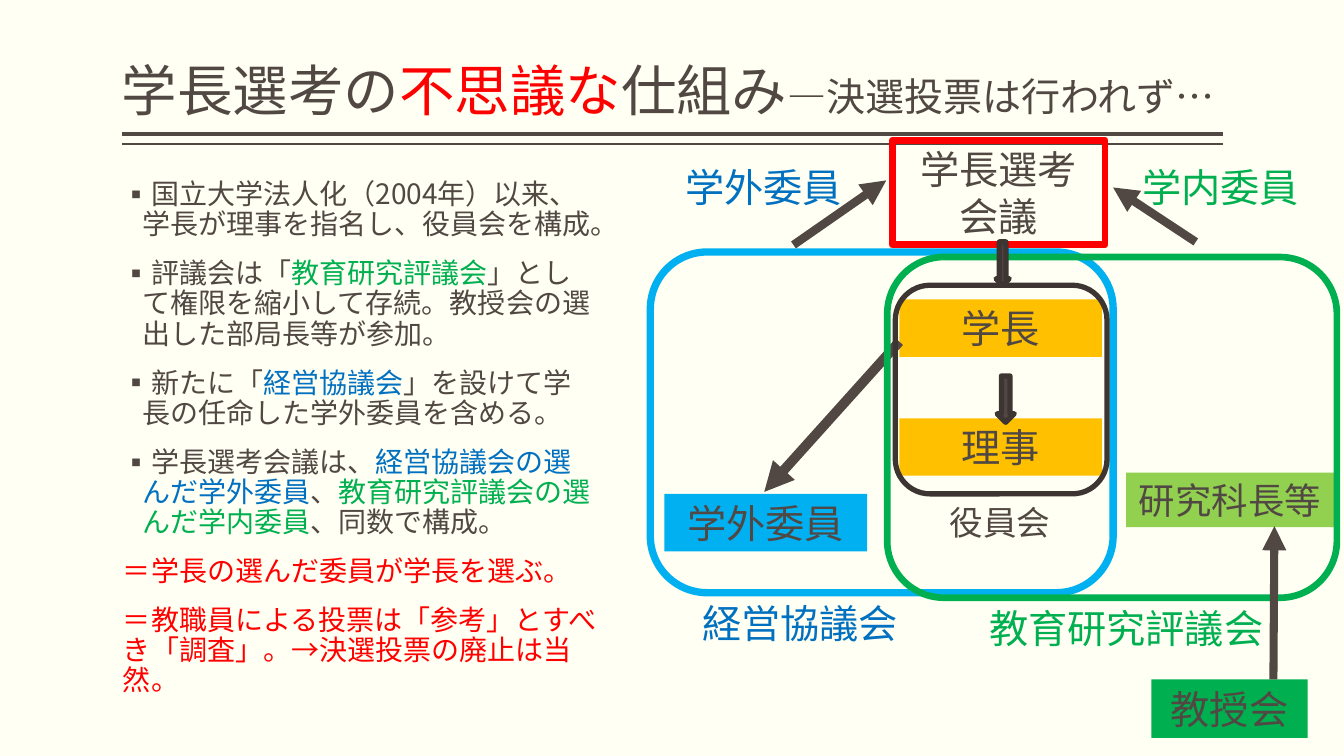
from dataclasses import dataclass
from typing import Optional

from lxml.etree import SubElement
from pptx import Presentation
from pptx.dml.color import RGBColor
from pptx.enum.shapes import MSO_CONNECTOR, MSO_SHAPE
from pptx.enum.text import MSO_ANCHOR, PP_ALIGN
from pptx.oxml.ns import qn
from pptx.util import Inches, Pt

COLORS = {
    "paper": "FFFFF3",
    "brown": "514843",
    "dark": "3C3532",
    "red": "FF0000",
    "blue": "0070C0",
    "sky": "00B0F0",
    "green": "00B050",
    "lime": "92D050",
    "gold": "FFC000",
}
HEADING_FONT = "Noto Sans CJK JP"
DIAGRAM_FONT = "Calibri"


@dataclass(frozen=True)
class Run:
    text: str
    color: str = "brown"
    size: Optional[float] = None


@dataclass(frozen=True)
class Box:
    left: float
    top: float
    width: float
    height: float
    text: str = ""
    fill: Optional[str] = None
    outline: Optional[str] = None
    weight: float = 0
    kind: MSO_SHAPE = MSO_SHAPE.RECTANGLE
    size: float = 28


@dataclass(frozen=True)
class Label:
    left: float
    top: float
    width: float
    height: float
    text: str
    color: str
    size: float = 28
    align: PP_ALIGN = PP_ALIGN.CENTER


@dataclass(frozen=True)
class Line:
    start: tuple[float, float]
    end: tuple[float, float]
    weight: float
    arrow: bool = True


RULES = [
    Line((12.13, 1.33), (1.21, 1.33), 3, False),
    Line((12.13, 1.43), (1.21, 1.43), 1, False),
]

TITLE = [
    Run("学長選考の"),
    Run("不思議な", "red"),
    Run("仕組み"),
    Run("―決選投票は行われず…", size=27.9),
]

BULLETS = [
    [Run("国立大学法人化（2004年）以来、学長が理事を指名し、役員会を構成。")],
    [
        Run("評議会は「"),
        Run("教育研究評議会", "green"),
        Run("」として権限を縮小して存続。教授会の選出した部局長等が参加。"),
    ],
    [
        Run("新たに「"),
        Run("経営協議会", "blue"),
        Run("」を設けて学長の任命した学外委員を含める。"),
    ],
    [
        Run("学長選考会議は、"),
        Run("経営協議会の選んだ学外委員", "blue"),
        Run("、"),
        Run("教育研究評議会の選んだ学内委員", "green"),
        Run("、同数で構成。"),
    ],
]
CONCLUSIONS = [
    [Run("＝学長の選んだ委員が学長を選ぶ。", "red")],
    [Run("＝教職員による投票は「参考」とすべき「調査」。→決選投票の廃止は当然。", "red")],
]

DIAGRAM = [
    Box(8.92, 2.97, 2.01, 0.57, "学長", "gold"),
    Box(8.92, 4.15, 2.01, 0.57, "理事", "gold"),
    Box(9.89, 3.73, 0.17, 0.46, "", "brown", "dark", 3.78, MSO_SHAPE.DOWN_ARROW),
    Box(6.59, 4.9, 2.01, 0.57, "学外委員", "sky"),
    Line((8.92, 3.39), (7.58, 4.88), 7),
    Box(6.45, 2.5, 4.59, 3.38, "", None, "sky", 5.25, MSO_SHAPE.FLOWCHART_ALTERNATE_PROCESS),
    Label(6.79, 5.9, 2.29, 0.57, "経営協議会", "blue"),
    Box(11.17, 4.69, 2.06, 0.54, "研究科長等", "lime", size=26),
    Box(8.8, 2.55, 4.46, 3.38, "", None, "green", 4.75, MSO_SHAPE.FLOWCHART_ALTERNATE_PROCESS),
    Label(9.11, 5.95, 4.12, 0.57, "教育研究評議会", "green"),
    Box(8.85, 1.39, 2.11, 1.04, "学長選考会議", None, "red", 5),
    Line((7.87, 2.43), (8.79, 1.79), 6),
    Line((11.86, 2.4), (11.04, 1.86), 6),
    Box(11.42, 6.74, 1.55, 0.58, "教授会", "green"),
    Line((12.63, 6.74), (12.64, 5.22), 5.75),
    Box(9.88, 2.4, 0.13, 0.43, "", "brown", "dark", 3.78, MSO_SHAPE.DOWN_ARROW),
    Label(6.43, 1.57, 2.29, 0.57, "学外委員", "blue"),
    Label(10.96, 1.57, 2.29, 0.57, "学内委員", "green"),
    Box(8.88, 2.83, 2.1, 2.07, "", None, "dark", 3.78, MSO_SHAPE.ROUNDED_RECTANGLE),
    Label(9.32, 4.93, 1.39, 0.5, "役員会", "brown", 24, PP_ALIGN.LEFT),
]


def rgb(name: str) -> RGBColor:
    return RGBColor.from_string(COLORS[name])


def write(paragraph, runs: list[Run], *, size: float, font: str = DIAGRAM_FONT,
          align: PP_ALIGN = PP_ALIGN.LEFT, spacing=None, before: float = 0) -> None:
    paragraph.alignment = align
    paragraph.space_before = Pt(before)
    if spacing is not None:
        paragraph.line_spacing = spacing
    for item in runs:
        run = paragraph.add_run()
        run.text = item.text
        run.font.size = Pt(item.size or size)
        run.font.name = font
        run.font.color.rgb = rgb(item.color)
        SubElement(run.font._element, qn("a:ea"), typeface=font)


def add_bullet(paragraph) -> None:
    properties = paragraph._p.get_or_add_pPr()
    properties.set("marL", str(Inches(0.19)))
    properties.set("indent", str(Inches(-0.19)))
    SubElement(properties, qn("a:buFont"), typeface=HEADING_FONT)
    SubElement(properties, qn("a:buChar"), char="▪")


def set_side_margins(frame) -> None:
    frame.word_wrap = True
    frame.margin_left = frame.margin_right = 0
    frame.margin_top = frame.margin_bottom = Inches(0.05)


def place(item: Box | Label) -> tuple:
    return tuple(Inches(n) for n in (item.left, item.top, item.width, item.height))


def draw_box(slide, box: Box) -> None:
    shape = slide.shapes.add_shape(box.kind, *place(box))
    shape.shadow.inherit = False
    if box.fill:
        shape.fill.solid()
        shape.fill.fore_color.rgb = rgb(box.fill)
    else:
        shape.fill.background()
    if box.outline:
        shape.line.color.rgb = rgb(box.outline)
        shape.line.width = Pt(box.weight)
    else:
        shape.line.fill.background()
    if box.text:
        shape.text_frame.word_wrap = True
        shape.text_frame.vertical_anchor = MSO_ANCHOR.MIDDLE
        write(shape.text_frame.paragraphs[0], [Run(box.text)], size=box.size, align=PP_ALIGN.CENTER)


def draw_label(slide, label: Label) -> None:
    frame = slide.shapes.add_textbox(*place(label)).text_frame
    frame.word_wrap = True
    write(frame.paragraphs[0], [Run(label.text, label.color)], size=label.size, align=label.align)


def draw_line(slide, line: Line) -> None:
    ends = [Inches(n) for n in (*line.start, *line.end)]
    connector = slide.shapes.add_connector(MSO_CONNECTOR.STRAIGHT, *ends)
    connector.line.color.rgb = rgb("brown")
    connector.line.width = Pt(line.weight)
    if line.arrow:
        SubElement(connector.line._get_or_add_ln(), qn("a:tailEnd"), type="triangle")
    SubElement(connector._element.spPr, qn("a:effectLst"))


def draw_title(slide) -> None:
    title = slide.shapes.title
    title.left, title.top, title.width, title.height = map(Inches, (1.21, 0.08, 10.92, 1.2))
    set_side_margins(title.text_frame)
    title.text_frame.vertical_anchor = MSO_ANCHOR.BOTTOM
    write(title.text_frame.paragraphs[0], TITLE, size=39.6, font=HEADING_FONT, spacing=0.9)


def draw_explanation(slide) -> None:
    frame = slide.shapes.add_textbox(*map(Inches, (1.22, 1.74, 4.7, 5.76))).text_frame
    set_side_margins(frame)
    for index, runs in enumerate(BULLETS + CONCLUSIONS):
        paragraph = frame.add_paragraph() if index else frame.paragraphs[0]
        write(paragraph, runs, size=20, font=HEADING_FONT, spacing=Pt(21.5), before=13.5 if index else 0)
        if index < len(BULLETS):
            add_bullet(paragraph)


def main() -> None:
    presentation = Presentation()
    presentation.slide_width, presentation.slide_height = Inches(13.33), Inches(7.5)
    slide = presentation.slides.add_slide(presentation.slide_layouts[5])
    slide.background.fill.solid()
    slide.background.fill.fore_color.rgb = rgb("paper")
    draw_title(slide)
    painters = {Box: draw_box, Label: draw_label, Line: draw_line}
    for item in RULES + DIAGRAM:
        painters[type(item)](slide, item)
    draw_explanation(slide)
    presentation.save("out.pptx")


if __name__ == "__main__":
    main()
